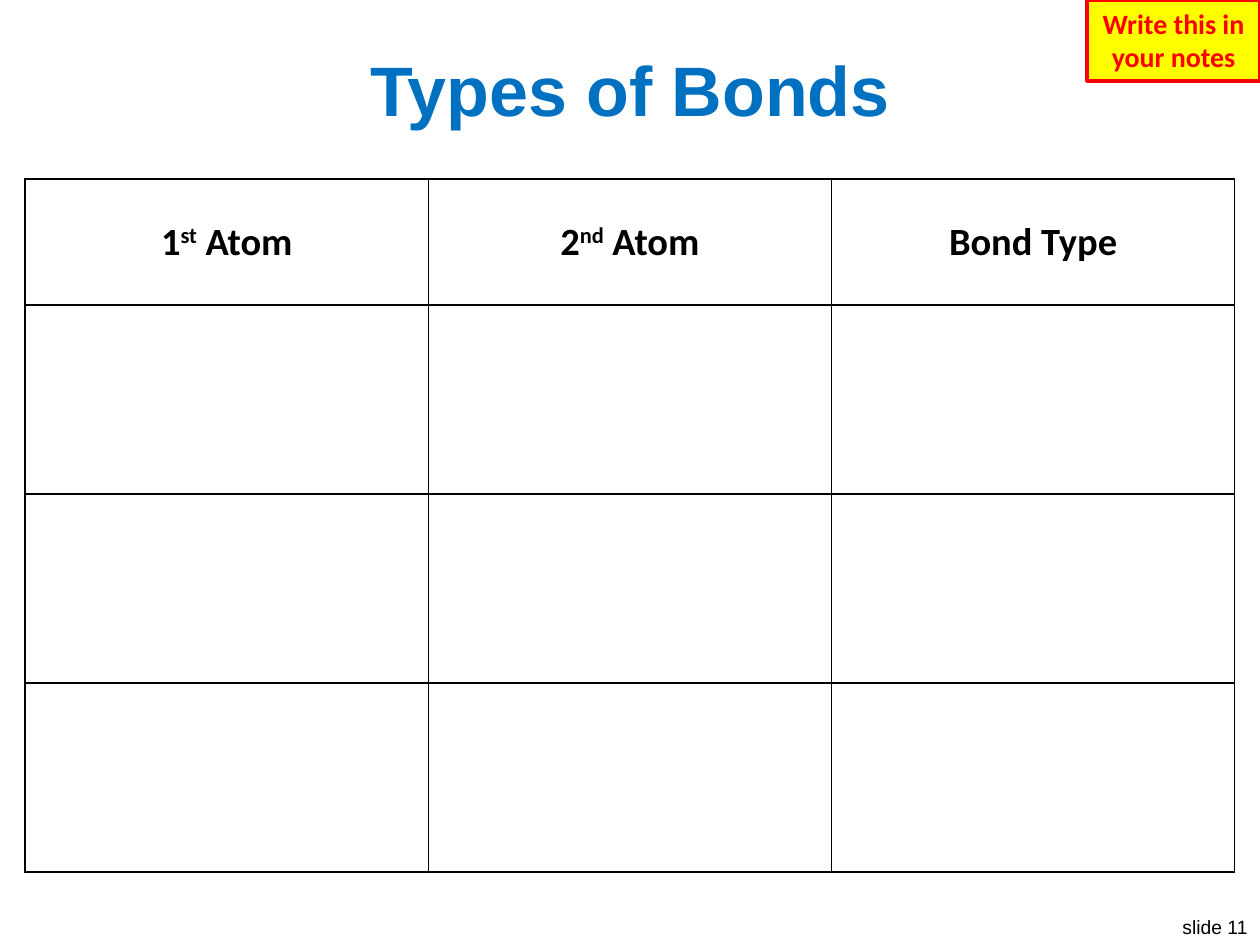
from pptx import Presentation
from pptx.dml.color import RGBColor
from pptx.enum.shapes import MSO_SHAPE
from pptx.enum.text import MSO_ANCHOR, PP_ALIGN
from pptx.oxml.ns import qn
from pptx.util import Inches, Pt
from lxml.etree import SubElement

BLACK = RGBColor(0x00, 0x00, 0x00)
BLUE = RGBColor(0x00, 0x70, 0xC0)
RED = RGBColor(0xFF, 0x00, 0x00)
YELLOW = RGBColor(0xFF, 0xFF, 0x00)
HEADERS = [("1", "st", " Atom"), ("2", "nd", " Atom"), ("Bond Type",)]
ROW_HEIGHTS = [1, 1.5, 1.5, 1.5]


def write(tf, *parts, size, font="Calibri", color=BLACK, bold=True,
          align=PP_ALIGN.CENTER):
    """Write one paragraph, raising every second part as superscript."""
    p = tf.paragraphs[0]
    p.alignment = align
    for i, text in enumerate(parts):
        r = p.add_run()
        r.text = text
        r.font.size = Pt(size)
        r.font.name = font
        r.font.bold = bold
        r.font.color.rgb = color
        if i % 2:
            r.font._element.set("baseline", "30000")


def add_text(slide, box, text, wrap=True, **fmt):
    """Add a vertically centred text box."""
    tf = slide.shapes.add_textbox(*map(Inches, box)).text_frame
    tf.word_wrap = wrap
    tf.vertical_anchor = MSO_ANCHOR.MIDDLE
    write(tf, text, font="Arial", **fmt)


def add_notes_label(slide, box):
    """Add the yellow reminder label."""
    s = slide.shapes.add_shape(MSO_SHAPE.RECTANGLE, *map(Inches, box))
    s.shadow.inherit = False
    s.fill.solid()
    s.fill.fore_color.rgb = YELLOW
    s.line.color.rgb = RED
    s.line.width = Pt(2.25)
    s.text_frame.word_wrap = True
    s.text_frame.vertical_anchor = MSO_ANCHOR.TOP
    write(s.text_frame, "Write this in your notes", size=16, color=RED)


def style_cell(cell):
    """Give a cell thin black borders and no fill."""
    tc_pr = cell._tc.get_or_add_tcPr()
    for side in ("lnL", "lnR", "lnT", "lnB"):
        ln = SubElement(tc_pr, qn(f"a:{side}"), w=str(Pt(1)))
        fill = SubElement(ln, qn("a:solidFill"))
        SubElement(fill, qn("a:srgbClr"), val=str(BLACK))
    cell.fill.background()
    cell.vertical_anchor = MSO_ANCHOR.MIDDLE


def add_bond_table(slide, box):
    """Add the bond table with headers and empty rows to fill in."""
    table = slide.shapes.add_table(
        len(ROW_HEIGHTS), len(HEADERS), *map(Inches, box)).table
    table.horz_banding = False
    for col in table.columns:
        col.width = Inches(box[2] / len(HEADERS))
    for row, height in zip(table.rows, ROW_HEIGHTS):
        row.height = Inches(height)
    for cell in table.iter_cells():
        style_cell(cell)
    for cell, parts in zip(table.rows[0].cells, HEADERS):
        write(cell.text_frame, *parts, size=22)


def main():
    """Build and save the slide."""
    prs = Presentation()
    prs.slide_width, prs.slide_height = Inches(10), Inches(7.5)
    slide = prs.slides.add_slide(prs.slide_layouts[6])
    add_text(slide, (9.25, 7.21, 0.75, 0.29), "slide 11", wrap=False,
             size=11, bold=False, align=PP_ALIGN.RIGHT)
    add_text(slide, (0.2, 0.3, 9.6, 0.8), "Types of Bonds", size=40, color=BLUE)
    add_notes_label(slide, (8.63, 0, 1.37, 0.64))
    add_bond_table(slide, (0.2, 1.42, 9.6, 5.5))
    prs.save("out.pptx")


if __name__ == "__main__":
    main()
